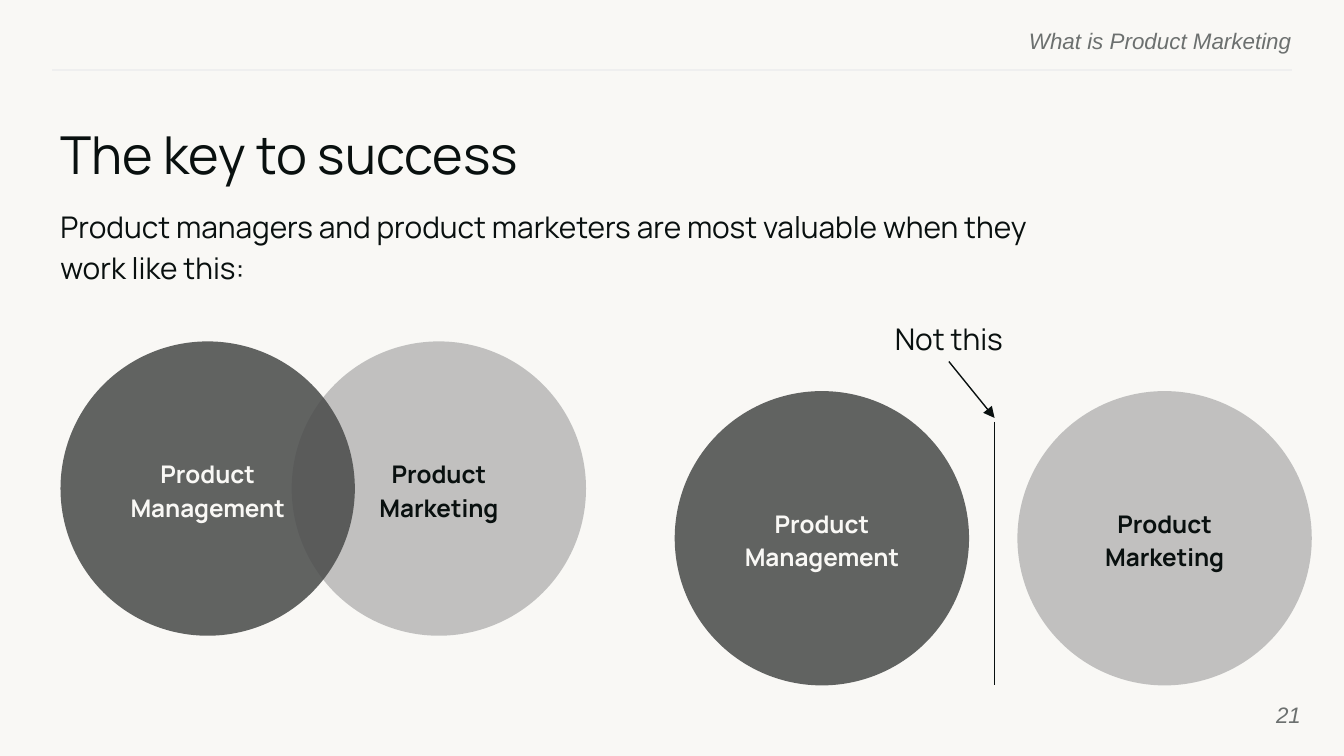
from dataclasses import dataclass

from lxml import etree
from pptx import Presentation
from pptx import util as u
from pptx.dml.color import RGBColor
from pptx.enum import shapes, text
from pptx.oxml.ns import qn


@dataclass(frozen=True)
class Theme:
    paper: str = "F9F8F5"
    ink: str = "09100F"
    muted: str = "6C706F"
    rule: str = "EFEFEF"
    management: str = "4B4D4C"
    marketing: str = "9E9E9E"
    management_alpha: int = 87
    marketing_alpha: int = 61
    heading_font: str = "Manrope"
    running_font: str = "Arial"
    title_size: int = 28
    lead_size: int = 16
    label_size: int = 13
    running_size: int = 12
    hairline: float = 0.75


THEME = Theme()
WIDTH, HEIGHT = 10, 5.625
MARGIN = 0.45
RULE_INSET = 0.39
DIAMETER = 2.19
LABEL_HEIGHT = 0.51
DIVIDER_X, DIVIDER_TOP = 7.4, 3.14
APART_TOP = 2.91

LEFT, CENTER, RIGHT = (text.PP_ALIGN.LEFT, text.PP_ALIGN.CENTER,
                       text.PP_ALIGN.RIGHT)
TOP, MIDDLE = text.MSO_ANCHOR.TOP, text.MSO_ANCHOR.MIDDLE


def rgb(color):
    return RGBColor.from_string(color)


def write(box, words, size, color=THEME.ink, font=THEME.heading_font,
          align=LEFT, anchor=TOP, spacing=1.0, after=10,
          bold=False, italic=False):
    """Fill a text box or placeholder with one formatted paragraph."""
    frame = box.text_frame
    frame.word_wrap = True
    frame.auto_size = text.MSO_AUTO_SIZE.NONE
    frame.vertical_anchor = anchor
    frame.margin_left = frame.margin_right = 0
    frame.margin_top = frame.margin_bottom = 0
    paragraph = frame.paragraphs[0]
    paragraph.alignment = align
    paragraph.line_spacing = spacing
    paragraph.space_before, paragraph.space_after = u.Pt(0), u.Pt(after)
    run = paragraph.add_run()
    run.text = words
    run.font.name, run.font.size = font, u.Pt(size)
    run.font.bold, run.font.italic = bold, italic
    run.font.color.rgb = rgb(color)


def place(box, left, top, width, height):
    box.left, box.top = u.Inches(left), u.Inches(top)
    box.width, box.height = u.Inches(width), u.Inches(height)


def add_text(slide, area, words, size, **style):
    box = slide.shapes.add_textbox(*map(u.Inches, area))
    write(box, words, size, **style)


def add_running_text(slide, area, words, anchor=TOP):
    add_text(slide, area, words, THEME.running_size, color=THEME.muted,
             font=THEME.running_font, align=RIGHT, anchor=anchor,
             after=0, italic=True)


def add_line(slide, start, end, color=THEME.ink, arrow=False):
    line = slide.shapes.add_connector(
        shapes.MSO_CONNECTOR.STRAIGHT, *map(u.Inches, (*start, *end)))
    line.line.color.rgb = rgb(color)
    line.line.width = u.Pt(THEME.hairline)
    if arrow:
        etree.SubElement(line.line._get_or_add_ln(), qn("a:tailEnd"),
                         type="triangle")
    etree.SubElement(line._element.spPr, qn("a:effectLst"))


def add_circle(slide, left, top, color, alpha):
    circle = slide.shapes.add_shape(
        shapes.MSO_SHAPE.OVAL,
        *map(u.Inches, (left, top, DIAMETER, DIAMETER)))
    circle.shadow.inherit = False
    circle.fill.solid()
    circle.fill.fore_color.rgb = rgb(color)
    circle.line.fill.background()
    tint = circle._element.spPr.find(".//" + qn("a:srgbClr"))
    etree.SubElement(tint, qn("a:alpha"), val=str(alpha * 1000))


def add_circle_label(slide, left, top, width, words, color):
    """Centre a label on the circle at the given corner."""
    area = (left + (DIAMETER - width) / 2,
            top + (DIAMETER - LABEL_HEIGHT) / 2, width, LABEL_HEIGHT)
    add_text(slide, area, words, THEME.label_size, color=color, align=CENTER,
             anchor=MIDDLE, spacing=1.15, bold=True)


def add_role_pair(slide, management_left, marketing_left, top):
    """Both roles, with management lying over marketing."""
    add_circle(slide, marketing_left, top, THEME.marketing,
               THEME.marketing_alpha)
    add_circle(slide, management_left, top, THEME.management,
               THEME.management_alpha)
    add_circle_label(slide, management_left, top, 1.7, "Product Management",
                     THEME.paper)
    add_circle_label(slide, marketing_left, top, 1.48, "Product Marketing",
                     THEME.ink)


def main():
    deck = Presentation()
    deck.slide_width, deck.slide_height = u.Inches(WIDTH), u.Inches(HEIGHT)
    slide = deck.slides.add_slide(deck.slide_layouts[0])
    slide.background.fill.solid()
    slide.background.fill.fore_color.rgb = rgb(THEME.paper)

    # Running header and page number
    right = WIDTH - RULE_INSET
    add_line(slide, (right, 0.52), (RULE_INSET, 0.52), THEME.rule)
    add_running_text(slide, (right - 3.85, 0.2, 3.85, 0.18),
                     "What is Product Marketing")
    add_running_text(slide, (9.08, 5.1, 0.6, 0.43), "21", MIDDLE)

    # Title and lead sentence
    title, lead = slide.shapes.title, slide.placeholders[1]
    place(title, MARGIN, 0.91, 9.23, 0.51)
    write(title, "The key to success", THEME.title_size)
    place(lead, MARGIN, 1.51, 7.35, 0.39)
    write(lead, "Product managers and product marketers are most valuable "
          "when they work like this:", THEME.lead_size, spacing=1.15)

    # Overlapping roles, then separated roles
    add_role_pair(slide, MARGIN, 2.17, 2.54)
    add_role_pair(slide, 5.02, 7.57, APART_TOP)

    # Divider between the separated roles
    add_text(slide, (6.32, 2.35, 1.48, 0.33), "Not this", THEME.lead_size,
             align=CENTER, spacing=1.15)
    add_line(slide, (7.06, 2.69), (DIVIDER_X, DIVIDER_TOP - 0.03), arrow=True)
    add_line(slide, (DIVIDER_X, DIVIDER_TOP),
             (DIVIDER_X, APART_TOP + DIAMETER))

    deck.save("out.pptx")


if __name__ == "__main__":
    main()
